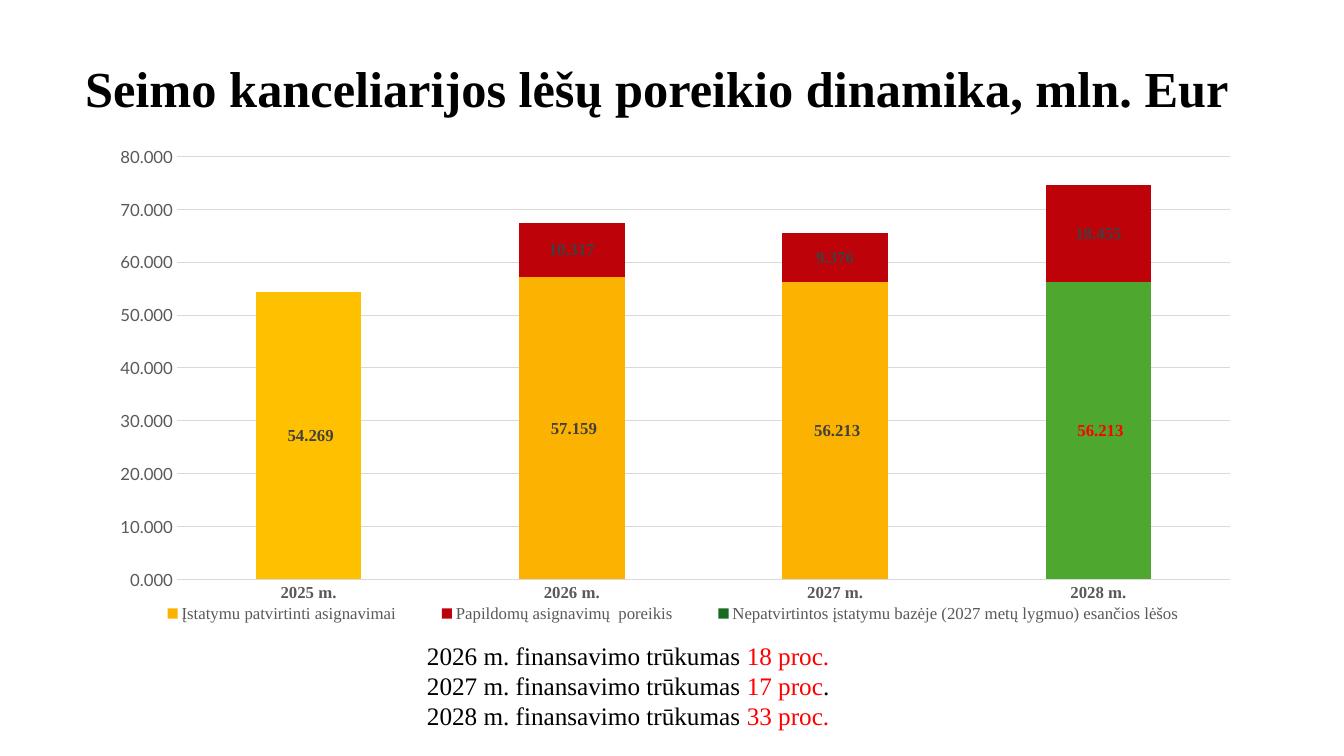
from pptx import Presentation
from pptx.chart.data import CategoryChartData
from pptx.dml.color import RGBColor
from pptx.enum.chart import XL_CHART_TYPE as ChartType
from pptx.enum.chart import XL_LABEL_POSITION as LabelPosition
from pptx.enum.chart import XL_LEGEND_POSITION as LegendPosition
from pptx.enum.chart import XL_TICK_MARK as TickMark
from pptx.enum.text import MSO_ANCHOR as Anchor
from pptx.enum.text import PP_ALIGN as Align
from pptx.oxml import parse_xml
from pptx.oxml.ns import nsdecls, qn
from pptx.util import Cm, Pt

BLACK = RGBColor(0x00, 0x00, 0x00)
RED = RGBColor(0xFF, 0x00, 0x00)
AXIS_GREY = RGBColor(0x59, 0x59, 0x59)
LABEL_GREY = RGBColor(0x40, 0x40, 0x40)
GRID_GREY = RGBColor(0xD9, 0xD9, 0xD9)
AMBER = RGBColor(0xFC, 0xB2, 0x00)
YELLOW = RGBColor(0xFF, 0xC0, 0x00)
GREEN = RGBColor(0x4E, 0xA7, 0x2E)
CRIMSON = RGBColor(0xBD, 0x02, 0x09)
DARK_GREEN = RGBColor(0x19, 0x6B, 0x24)

SERIF = "Times New Roman"
SANS = "Lato"
GROUPED = "#\\ ##0.000"

YEARS = ["2025 m.", "2026 m.", "2027 m.", "2028 m."]
SERIES = [
    ("Įstatymu patvirtinti asignavimai", [54.269, 57.159, 56.213, 56.213], AMBER, GROUPED),
    ("Papildomų asignavimų  poreikis", [None, 10.317, 9.376, 18.455], CRIMSON, "0.000"),
    ("Nepatvirtintos įstatymu bazėje (2027 metų lygmuo) esančios lėšos",
     [None] * 4, DARK_GREEN, GROUPED),
]
SHORTFALLS = [
    ("2026", [("18 proc.", RED)]),
    ("2027", [("17 proc", RED), (".", BLACK)]),
    ("2028", [("33 proc.", RED)]),
]


def format_font(font, size=12, color=AXIS_GREY, name=SERIF, bold=False):
    """Apply size, colour, typeface and weight to a font."""
    font.size, font.name, font.bold = Pt(size), name, bold
    font.color.rgb = color


def add_text(paragraph, text, **font_format):
    """Append a formatted run to a paragraph."""
    run = paragraph.add_run()
    run.text = text
    format_font(run.font, **font_format)


def fill_solid(target, color):
    """Give a chart element a solid fill."""
    target.format.fill.solid()
    target.format.fill.fore_color.rgb = color


def set_line(line_format):
    """Draw a thin grey line."""
    line_format.color.rgb = GRID_GREY
    line_format.width = Pt(0.75)


def set_layout(parent, index, box, target=""):
    """Fix the place of a chart part, as fractions of the chart."""
    for layout in parent.findall(qn("c:layout")):
        parent.remove(layout)
    modes = '<c:xMode val="edge"/><c:yMode val="edge"/>'
    sizes = "".join(f'<c:{key} val="{value}"/>' for key, value in zip("xywh", box))
    parent.insert(index, parse_xml(
        f'<c:layout {nsdecls("c")}><c:manualLayout>{target}{modes}{sizes}'
        '</c:manualLayout></c:layout>'))


def place_title(slide, left, top, width, height):
    """Move the title placeholder and fill it."""
    title = slide.shapes.title
    title.left, title.top, title.width, title.height = left, top, width, height
    title.text_frame.vertical_anchor = Anchor.MIDDLE
    paragraph = title.text_frame.paragraphs[0]
    paragraph.alignment = Align.CENTER
    paragraph.line_spacing = 0.9
    add_text(paragraph, "Seimo kanceliarijos lėšų poreikio dinamika, mln. Eur",
             size=36, color=BLACK, bold=True)


def format_axes(chart):
    """Style the category and value axes."""
    years, amounts = chart.category_axis, chart.value_axis
    for axis in (years, amounts):
        axis.major_tick_mark = axis.minor_tick_mark = TickMark.NONE
    format_font(years.tick_labels.font, bold=True)
    set_line(years.format.line)
    format_font(amounts.tick_labels.font, name=SANS)
    amounts.tick_labels.number_format = GROUPED
    amounts.tick_labels.number_format_is_linked = False
    amounts.minimum_scale, amounts.maximum_scale, amounts.major_unit = 0, 80, 10
    amounts.format.line.fill.background()
    set_line(amounts.major_gridlines.format.line)


def format_series(plot):
    """Colour the columns and label their values."""
    for series, (_, _, color, number_format) in zip(plot.series, SERIES):
        fill_solid(series, color)
        labels = series.data_labels
        labels.show_value = True
        labels.position = LabelPosition.CENTER
        labels.number_format = number_format
        labels.number_format_is_linked = False
        format_font(labels.font, color=LABEL_GREY, bold=True)
    approved = plot.series[0]
    fill_solid(approved.points[0], YELLOW)
    fill_solid(approved.points[3], GREEN)
    unapproved_label = approved.points[3].data_label
    format_font(unapproved_label.font, color=RED, bold=True)
    unapproved_label.position = LabelPosition.CENTER


def place_chart(slide, left, top, width, height):
    """Add the stacked column chart of funding needs."""
    data = CategoryChartData()
    data.categories = YEARS
    for name, values, _, number_format in SERIES:
        data.add_series(name, values, number_format)
    chart = slide.shapes.add_chart(
        ChartType.COLUMN_STACKED, left, top, width, height, data).chart
    format_font(chart.font, size=10, color=BLACK, name=SANS)
    chart.has_title = False
    plot = chart.plots[0]
    plot.gap_width, plot.overlap, plot.vary_by_categories = 150, 100, False
    format_axes(chart)
    format_series(plot)
    chart.has_legend = True
    legend = chart.legend
    legend.position = LegendPosition.BOTTOM
    legend.include_in_layout = False
    format_font(legend.font)
    plot_area = chart.element.find(".//" + qn("c:plotArea"))
    set_layout(plot_area, 0, (0.0725, 0.04, 0.907, 0.833),
               '<c:layoutTarget val="inner"/>')
    set_layout(chart.element.find(".//" + qn("c:legend")), 1, (0.03, 0.91, 0.94, 0.06))


def place_shortfalls(slide, left, top, width, height):
    """Add the centred lines on the funding shortfall of each year."""
    frame = slide.shapes.add_textbox(left, top, width, height).text_frame
    frame.word_wrap = True
    for index, (year, parts) in enumerate(SHORTFALLS):
        paragraph = frame.add_paragraph() if index else frame.paragraphs[0]
        paragraph.alignment = Align.CENTER
        for text, color in [(f"{year} m. finansavimo trūkumas ", BLACK), *parts]:
            add_text(paragraph, text, size=18, color=color)


def main():
    """Build and save the presentation."""
    presentation = Presentation()
    presentation.slide_width, presentation.slide_height = Cm(33.87), Cm(19.05)
    slide = presentation.slides.add_slide(presentation.slide_layouts[5])
    place_title(slide, Cm(0.97), Cm(0.46), Cm(31.19), Cm(3.68))
    place_chart(slide, Cm(2.34), Cm(3.43), Cm(29.26), Cm(12.8))
    place_shortfalls(slide, Cm(0.64), Cm(16), Cm(30.38), Cm(2.57))
    presentation.save("out.pptx")


if __name__ == "__main__":
    main()
